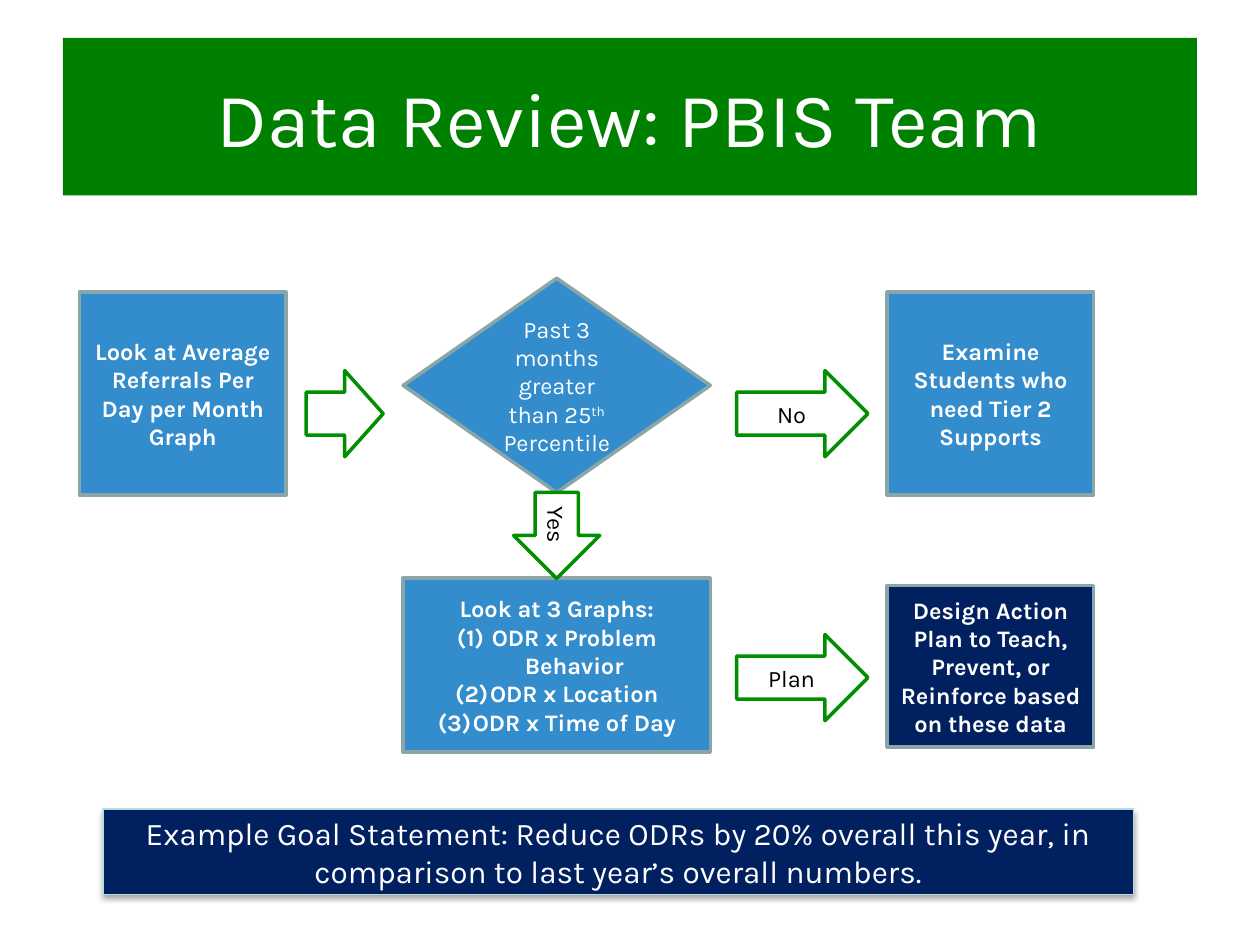
from dataclasses import dataclass

from lxml import etree
from pptx import Presentation
from pptx import util as u
from pptx.dml.color import RGBColor
from pptx.enum import shapes, text
from pptx.oxml import ns

Pt = u.Pt
Kind = shapes.MSO_SHAPE


@dataclass(frozen=True)
class Theme:
    font: str = "Karla"
    title_size: float = 44
    goal_size: float = 18
    step_size: float = 13.5
    white: str = "FFFFFF"
    black: str = "000000"
    banner: str = "008000"
    step: str = "0070C0"
    navy: str = "002060"
    step_line: str = "8AA6A8"
    arrow_line: str = "008F00"
    goal_line: str = "B6DCDF"


theme = Theme()


def write(frame, content, size=theme.step_size, color=theme.white, bold=False, numbered=False):
    """Fill a text frame; ^marks^ raise text, numbered applies after line one."""
    frame.word_wrap = True
    frame.vertical_anchor = text.MSO_ANCHOR.MIDDLE
    for index, line in enumerate(content.split("\n")):
        para = frame.paragraphs[0] if index == 0 else frame.add_paragraph()
        para.alignment = text.PP_ALIGN.CENTER
        if numbered and index:
            props = para._p.get_or_add_pPr()
            props.set("marL", str(Pt(20)))
            props.set("indent", str(-Pt(20)))
            etree.SubElement(props, ns.qn("a:buFont"), typeface=theme.font)
            etree.SubElement(props, ns.qn("a:buAutoNum"), type="arabicParenBoth")
        for part, piece in enumerate(line.split("^")):
            run = para.add_run()
            run.text = piece
            run.font.name = theme.font
            run.font.size = Pt(size)
            run.font.bold = bold
            run.font.color.rgb = RGBColor.from_string(color)
            if part % 2:
                run._r.get_or_add_rPr().set("baseline", "30000")


def add_block(kind, box, fill, line=None, width=2, alpha=None):
    block = slide.shapes.add_shape(kind, *map(Pt, box))
    block.shadow.inherit = False
    block.fill.solid()
    block.fill.fore_color.rgb = RGBColor.from_string(fill)
    if alpha:
        color = block._element.spPr.find(".//" + ns.qn("a:srgbClr"))
        etree.SubElement(color, ns.qn("a:alpha"), val=str(alpha * 1000))
    if line:
        block.line.color.rgb = RGBColor.from_string(line)
        block.line.width = Pt(width)
    else:
        block.line.fill.background()
    return block


deck = Presentation()
deck.slide_width, deck.slide_height = Pt(720), Pt(540)
slide = deck.slides.add_slide(deck.slide_layouts[6])

banner = add_block(Kind.RECTANGLE, (36, 21.6, 648, 90), theme.banner)
write(banner.text_frame, "Data Review: PBIS Team", size=theme.title_size)

# Flowchart columns and the width of the outer steps
left, middle, right = 45.4, 230.4, 507
step_width, middle_width = 118, 175.5
top = 167

steps = [
    (Kind.RECTANGLE, (left, top, step_width, 116), theme.step, 80,
     "Look at Average Referrals Per Day per Month Graph", {"bold": True}),
    (Kind.DIAMOND, (middle, 159, middle_width, 122.5), theme.step, 80,
     "Past 3 months greater than 25^th^ Percentile", {}),
    (Kind.RECTANGLE, (right, top, step_width, 116), theme.step, 80,
     "Examine Students who need Tier 2 Supports", {"bold": True}),
    (Kind.RECTANGLE, (middle, 330.2, middle_width, 99.6), theme.step, 80,
     "Look at 3 Graphs:\nODR x Problem Behavior\nODR x Location\nODR x Time of Day",
     {"bold": True, "numbered": True}),
    (Kind.RECTANGLE, (right, 334.6, step_width, 92.4), theme.navy, None,
     "Design Action Plan to Teach, Prevent, or Reinforce based on these data",
     {"bold": True}),
]
for kind, box, fill, alpha, label, style in steps:
    step = add_block(kind, box, fill, theme.step_line, alpha=alpha)
    write(step.text_frame, label, **style)

arrow_height = 49.2
arrows = [
    ("", 175, 211.8, 44, 0),
    ("No", 421, 211.8, 75, 0),
    ("Plan", 421, 362.6, 75, 0),
    ("Yes", middle + (middle_width - arrow_height) / 2, 281.4, arrow_height, 90),
]
for label, x, y, width, turn in arrows:
    arrow = add_block(Kind.RIGHT_ARROW, (x, y, width, arrow_height),
                      theme.white, theme.arrow_line)
    arrow.rotation = turn
    if label:
        write(arrow.text_frame, label, color=theme.black)

goal = add_block(Kind.RECTANGLE, (58.8, 462.4, 589, 48.8), theme.navy,
                 theme.goal_line, width=0.75)
write(goal.text_frame,
      "Example Goal Statement: Reduce ODRs by 20% overall this year, "
      "in comparison to last year’s overall numbers.", size=theme.goal_size)
effects = goal._element.spPr.find(ns.qn("a:effectLst"))
shadow = etree.SubElement(effects, ns.qn("a:outerShdw"), blurRad=str(Pt(3.1)),
                          dist=str(Pt(1.8)), dir="5400000", rotWithShape="0")
shade = etree.SubElement(shadow, ns.qn("a:srgbClr"), val=theme.black)
etree.SubElement(shade, ns.qn("a:alpha"), val="35000")

deck.save("out.pptx")
